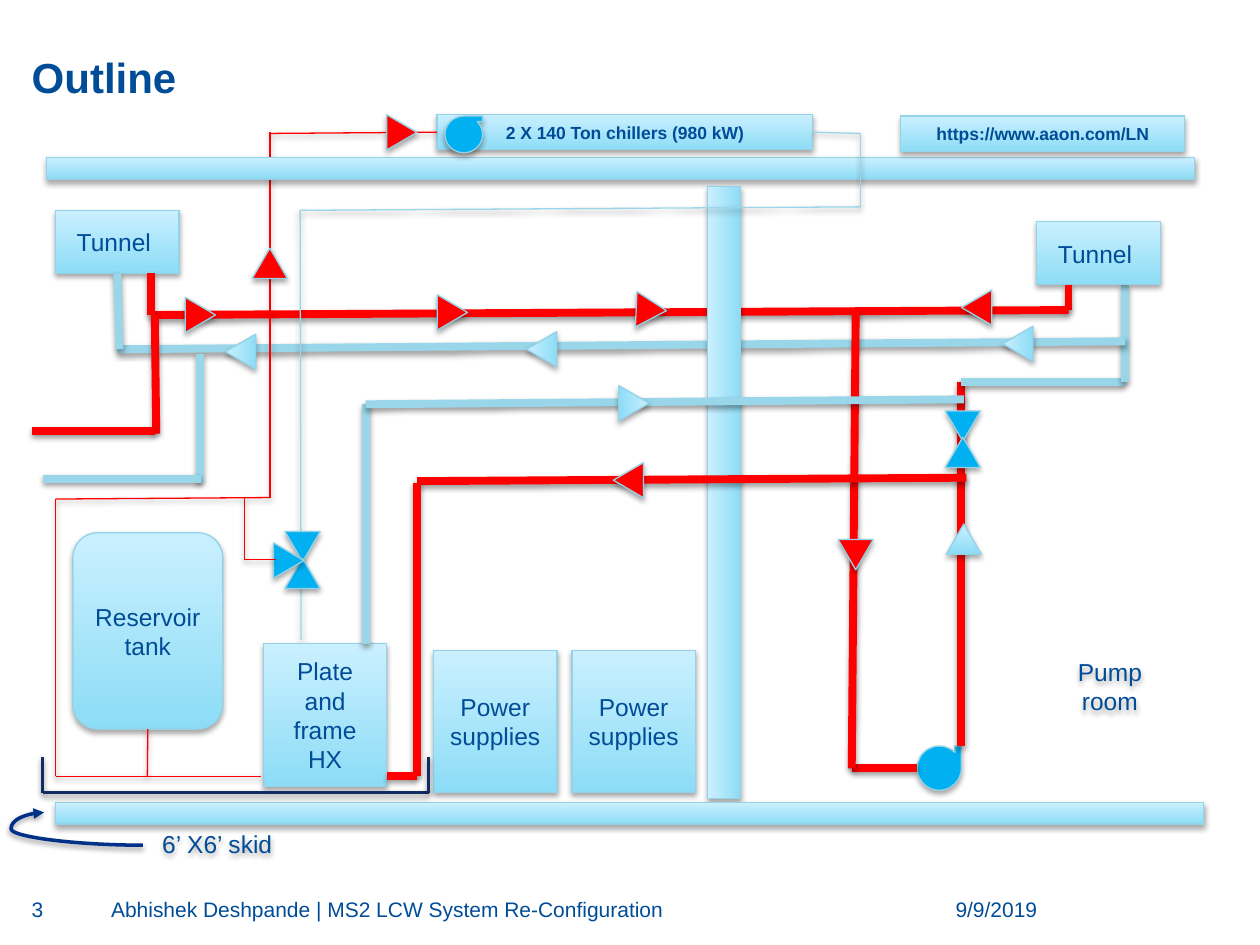
import pptx
import pptx.dml.color
import pptx.enum.shapes
import pptx.enum.text
import pptx.oxml
import pptx.oxml.ns
import pptx.util
from pptx.util import Cm

SHAPE = pptx.enum.shapes.MSO_SHAPE
CONNECTOR = pptx.enum.shapes.MSO_CONNECTOR
ALIGN = pptx.enum.text.PP_ALIGN
ANCHOR = pptx.enum.text.MSO_ANCHOR

TEXT, OUTLINE, PUMP = "004C97", "94D2E7", "00B0F0"
HOT, COLD, SKID, POINTER = "FF0000", "99D6EA", "0F2D62", "003087"
PANEL = ("8DDCF6", "CAF0FF")
THICK, THIN = 4.5, 0.75
UP, RIGHT, DOWN, LEFT = 0, 90, 180, 270
TOP_SIDE, LEFT_SIDE, BOTTOM_SIDE, RIGHT_SIDE = range(4)


def color(value):
    return pptx.dml.color.RGBColor.from_string(value)


def add_shadow(item, distance, alpha):
    properties = item._element.spPr
    for old in properties.findall(pptx.oxml.ns.qn("a:effectLst")):
        properties.remove(old)
    properties.append(pptx.oxml.parse_xml(
        f'<a:effectLst {pptx.oxml.ns.nsdecls("a")}>'
        f'<a:outerShdw blurRad="40000" dist="{distance}" dir="5400000" rotWithShape="0">'
        f'<a:srgbClr val="000000"><a:alpha val="{alpha}000"/></a:srgbClr>'
        '</a:outerShdw></a:effectLst>'))


def write(frame, text, size, bold=False, align=ALIGN.CENTER, anchor=ANCHOR.MIDDLE):
    frame.word_wrap = True
    frame.vertical_anchor = anchor
    frame.text = text
    paragraph = frame.paragraphs[0]
    paragraph.alignment = align
    for run in paragraph.runs:
        run.font.name = "Arial"
        run.font.size = pptx.util.Pt(size)
        run.font.bold = bold
        run.font.color.rgb = color(TEXT)


def no_margins(frame):
    frame.margin_left = frame.margin_top = frame.margin_right = frame.margin_bottom = 0


def add_block(slide, box, text="", size=14, bold=False, kind=SHAPE.RECTANGLE,
              fill=PANEL, turn=0):
    block = slide.shapes.add_shape(kind, *map(Cm, box))
    block.rotation = turn
    block.shadow.inherit = False
    if fill == PANEL:
        block.fill.gradient()
        block.fill.gradient_angle = 90
        for stop, shade in zip(block.fill.gradient_stops, PANEL):
            stop.color.rgb = color(shade)
    else:
        block.fill.solid()
        block.fill.fore_color.rgb = color(fill)
    block.line.color.rgb = color(OUTLINE)
    block.line.width = pptx.util.Pt(0.75)
    add_shadow(block, 23000, 35)
    if text:
        write(block.text_frame, text, size, bold)
    return block


def add_arrow(slide, center_x, center_y, turn, fill):
    width, height = 0.71, 0.61
    add_block(slide, (center_x - width / 2, center_y - height / 2, width, height),
              kind=SHAPE.ISOSCELES_TRIANGLE, fill=fill, turn=turn)


def add_line(slide, start, end, shade, width, kind=CONNECTOR.STRAIGHT):
    line = slide.shapes.add_connector(kind, *map(Cm, (*start, *end)))
    line.line.color.rgb = color(shade)
    line.line.width = pptx.util.Pt(width)
    add_shadow(line, 20000, 38)
    return line


def add_pipe(slide, shade, width, *points):
    """Draw a run of straight segments through the points."""
    return [add_line(slide, start, end, shade, width)
            for start, end in zip(points, points[1:])]


def add_label(slide, box, text):
    label = slide.shapes.add_textbox(*map(Cm, box))
    write(label.text_frame, text, 14)
    add_shadow(label, 23000, 35)


def add_title_and_footer(slide):
    title = slide.shapes.title
    title.left, title.top, title.width, title.height = map(Cm, (0.64, 0.28, 24.13, 1.78))
    no_margins(title.text_frame)
    write(title.text_frame, "Outline", 24, True, ALIGN.LEFT, ANCHOR.BOTTOM)
    for left, width, text, align in (
            (17.91, 3, "9/9/2019", ALIGN.RIGHT),
            (2.24, 14.94, "Abhishek Deshpande | MS2 LCW System Re-Configuration", ALIGN.LEFT),
            (0.64, 1.24, "3", ALIGN.LEFT)):
        footer = slide.shapes.add_textbox(*map(Cm, (left, 18.08, width, 0.66)))
        no_margins(footer.text_frame)
        write(footer.text_frame, text, 12, align=align, anchor=ANCHOR.TOP)


def add_tunnel_loops(slide):
    add_block(slide, (18.49, 15.04, 0.89, 0.89), kind=SHAPE.FLOWCHART_SEQUENTIAL_ACCESS_STORAGE,
              fill=PUMP, turn=270)
    add_pipe(slide, HOT, THICK, (19.38, 15.04), (19.38, 7.7))
    add_pipe(slide, COLD, THICK, (19.38, 7.7), (22.68, 7.7), (22.68, 5.74))
    add_pipe(slide, COLD, THICK, (22.68, 6.88), (2.36, 7.04))
    add_block(slide, (20.9, 4.47, 2.49, 1.27), "Tunnel ")
    left_tunnel = add_block(slide, (1.12, 4.24, 2.49, 1.27), "Tunnel ")
    add_pipe(slide, HOT, THICK, (21.54, 5.74), (21.54, 6.25), (3.05, 6.35), (3.05, 5.51))
    supply = add_pipe(slide, COLD, THICK, (2.41, 7.04), (2.36, 5.51))[0]
    supply.end_connect(left_tunnel, BOTTOM_SIDE)
    add_pipe(slide, HOT, THICK, (18.49, 15.49), (17.17, 15.49), (17.25, 6.25))
    # Branches leaving on the left
    add_pipe(slide, HOT, THICK, (3.12, 6.35), (3.15, 8.74))
    add_pipe(slide, HOT, THICK, (3.12, 8.69), (0.64, 8.69))
    add_pipe(slide, COLD, THICK, (4.04, 7.14), (4.04, 9.73))
    add_pipe(slide, COLD, THICK, (4.06, 9.65), (0.86, 9.65))


def add_chillers(slide):
    add_pipe(slide, HOT, THIN, (5.44, 10.03), (5.44, 2.67))
    add_block(slide, (0.94, 3.18, 23.14, 0.43))  # roof
    chiller = add_block(slide, (8.81, 2.31, 7.57, 0.71), "2 X 140 Ton chillers (980 kW)", 10, True)
    add_block(slide, (18.16, 2.34, 5.72, 0.71), "https://www.aaon.com/LN", 10, True)
    inlet = add_pipe(slide, HOT, THIN, (5.44, 2.69), (8.81, 2.67))[0]
    inlet.end_connect(chiller, LEFT_SIDE)
    add_block(slide, (8.43, 9.6, 12.34, 0.66), turn=270)  # dividing wall
    outlet = add_pipe(slide, COLD, THIN, (16.38, 2.69), (17.35, 2.69), (17.35, 4.17),
                      (6.05, 4.24), (6.07, 12.9))[0]
    outlet.begin_connect(chiller, RIGHT_SIDE)
    pump = add_block(slide, (8.97, 2.34, 0.76, 0.74),
                     kind=SHAPE.FLOWCHART_SEQUENTIAL_ACCESS_STORAGE, fill=PUMP, turn=180)
    pump._element.spPr.xfrm.set("flipH", "1")


def add_equipment(slide):
    add_block(slide, (1.12, 16.18, 23.14, 0.43))  # floor
    add_block(slide, (5.31, 12.98, 2.49, 2.87), "Plate and frame HX")
    for left in (8.74, 11.53):
        add_block(slide, (left, 13.11, 2.49, 2.87), "Power supplies")
    add_label(slide, (21.13, 12.4, 2.49, 2.87), "Pump room")
    tank = add_block(slide, (1.47, 10.74, 3.02, 3.96), "Reservoir tank",
                     kind=SHAPE.FLOWCHART_ALTERNATE_PROCESS)
    add_pipe(slide, HOT, THIN, (5.26, 15.65), (1.12, 15.65), (1.12, 10.06), (5.44, 10.03))
    drain = add_pipe(slide, HOT, THIN, (2.97, 15.65), (2.97, 14.7))[0]
    drain.end_connect(tank, BOTTOM_SIDE)
    # Heat exchanger loop
    add_pipe(slide, HOT, THICK, (19.48, 9.63), (8.41, 9.7))
    add_pipe(slide, HOT, THICK, (8.41, 9.73), (8.41, 15.65), (7.8, 15.65))
    add_pipe(slide, COLD, THICK, (7.37, 12.98), (7.37, 8.15), (19.43, 8.05))


def add_arrows_and_valves(slide):
    flows = {
        PANEL: ((19.43, 10.87, UP), (20.52, 6.93, LEFT), (10.92, 7.04, LEFT),
                (4.85, 7.09, LEFT), (12.78, 8.13, RIGHT)),
        HOT: ((17.25, 11.18, DOWN), (13.13, 6.25, 92.6), (9.12, 6.3, RIGHT),
              (4.04, 6.35, RIGHT), (5.44, 5.31, UP), (8.1, 2.67, RIGHT),
              (19.69, 6.2, LEFT), (12.67, 9.68, LEFT)),
        PUMP: ((19.41, 8.59, DOWN), (19.41, 9.12, UP), (6.1, 11.02, DOWN),
               (6.1, 11.56, UP), (5.82, 11.3, RIGHT)),
    }
    for fill, arrows in flows.items():
        for center_x, center_y, turn in arrows:
            add_arrow(slide, center_x, center_y, turn, fill)
    add_pipe(slide, HOT, THIN, (5.56, 11.28), (4.93, 11.28), (4.93, 10.03))


def add_skid(slide):
    add_pipe(slide, SKID, 2, (0.86, 15.27), (0.86, 15.98), (8.64, 15.98), (8.64, 15.27))
    pointer = add_line(slide, (2.88, 17.04), (0.89, 16.38), POINTER, 2, CONNECTOR.CURVE)
    geometry = pointer._element.spPr.find(pptx.oxml.ns.qn("a:prstGeom"))
    for old in list(geometry):
        geometry.remove(old)
    names = pptx.oxml.ns.nsdecls("a")
    geometry.append(pptx.oxml.parse_xml(
        f'<a:avLst {names}><a:gd name="adj1" fmla="val 133500"/></a:avLst>'))
    pointer.line._get_or_add_ln().append(pptx.oxml.parse_xml(f'<a:tailEnd {names} type="triangle"/>'))
    add_label(slide, (1.47, 15.57, 5.82, 2.87), "6’ X6’ skid")


def main():
    deck = pptx.Presentation()
    deck.slide_width, deck.slide_height = Cm(25.4), Cm(19.05)
    slide = deck.slides.add_slide(deck.slide_layouts[5])
    add_title_and_footer(slide)
    add_tunnel_loops(slide)
    add_chillers(slide)
    add_equipment(slide)
    add_arrows_and_valves(slide)
    add_skid(slide)
    deck.save("out.pptx")


if __name__ == "__main__":
    main()
